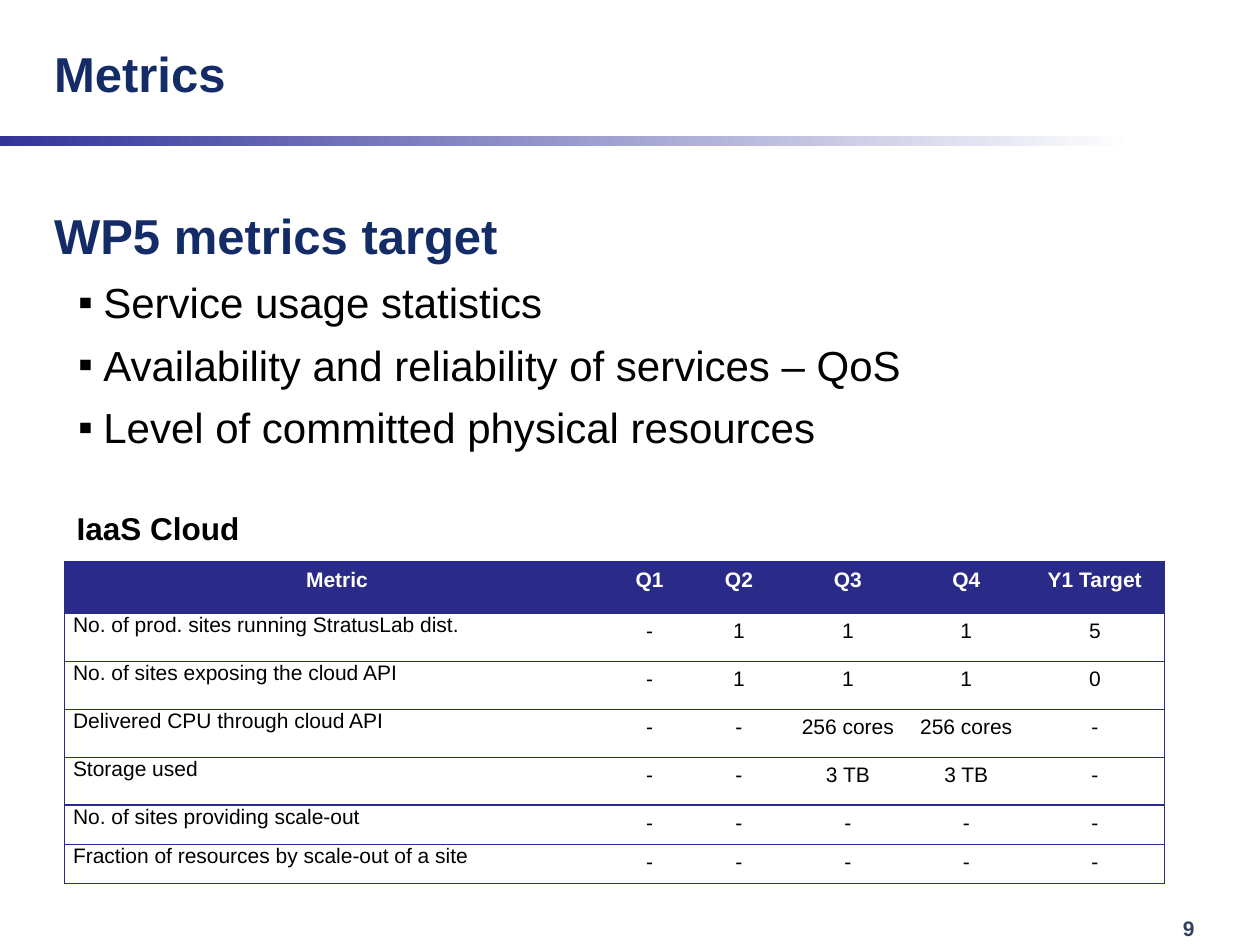
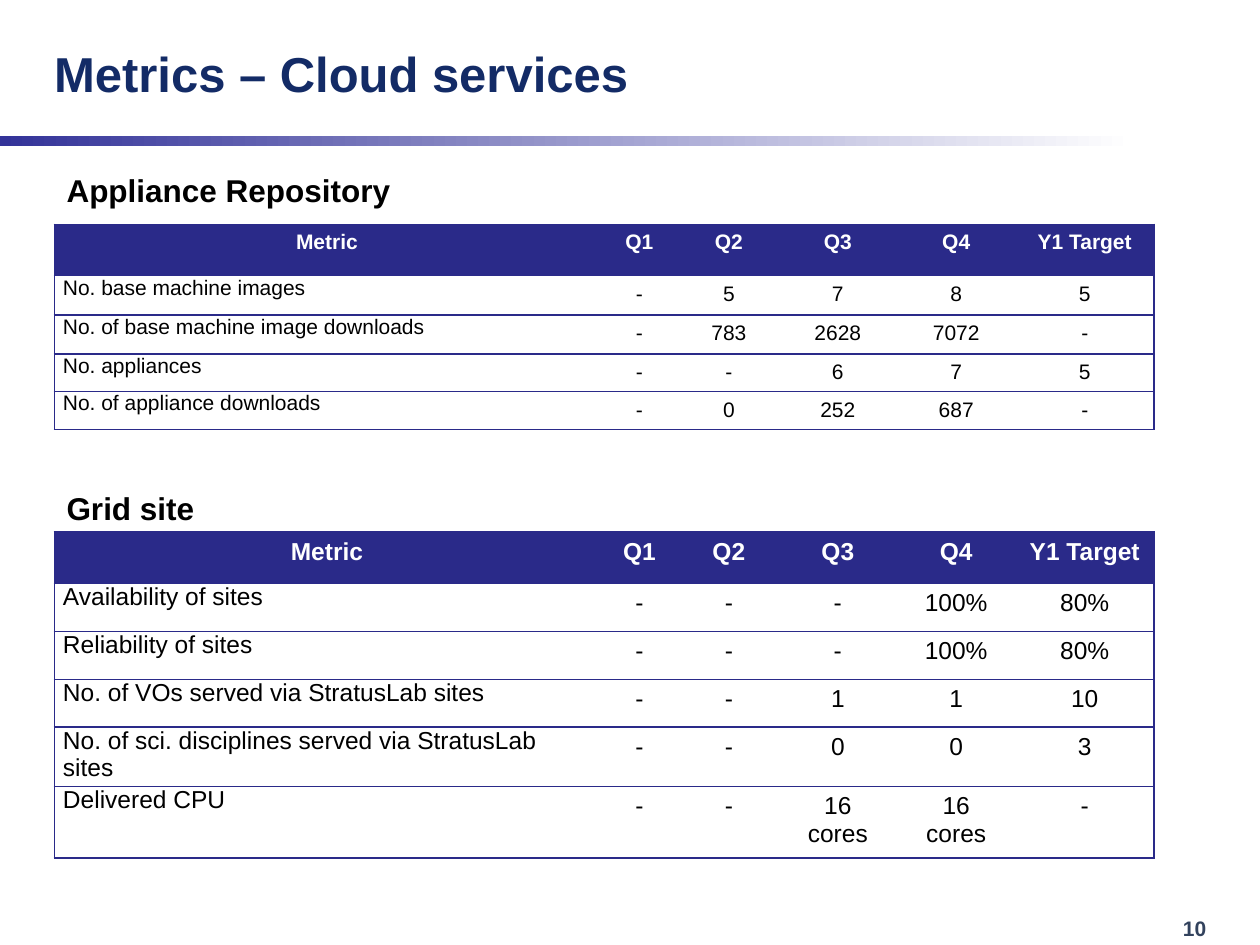
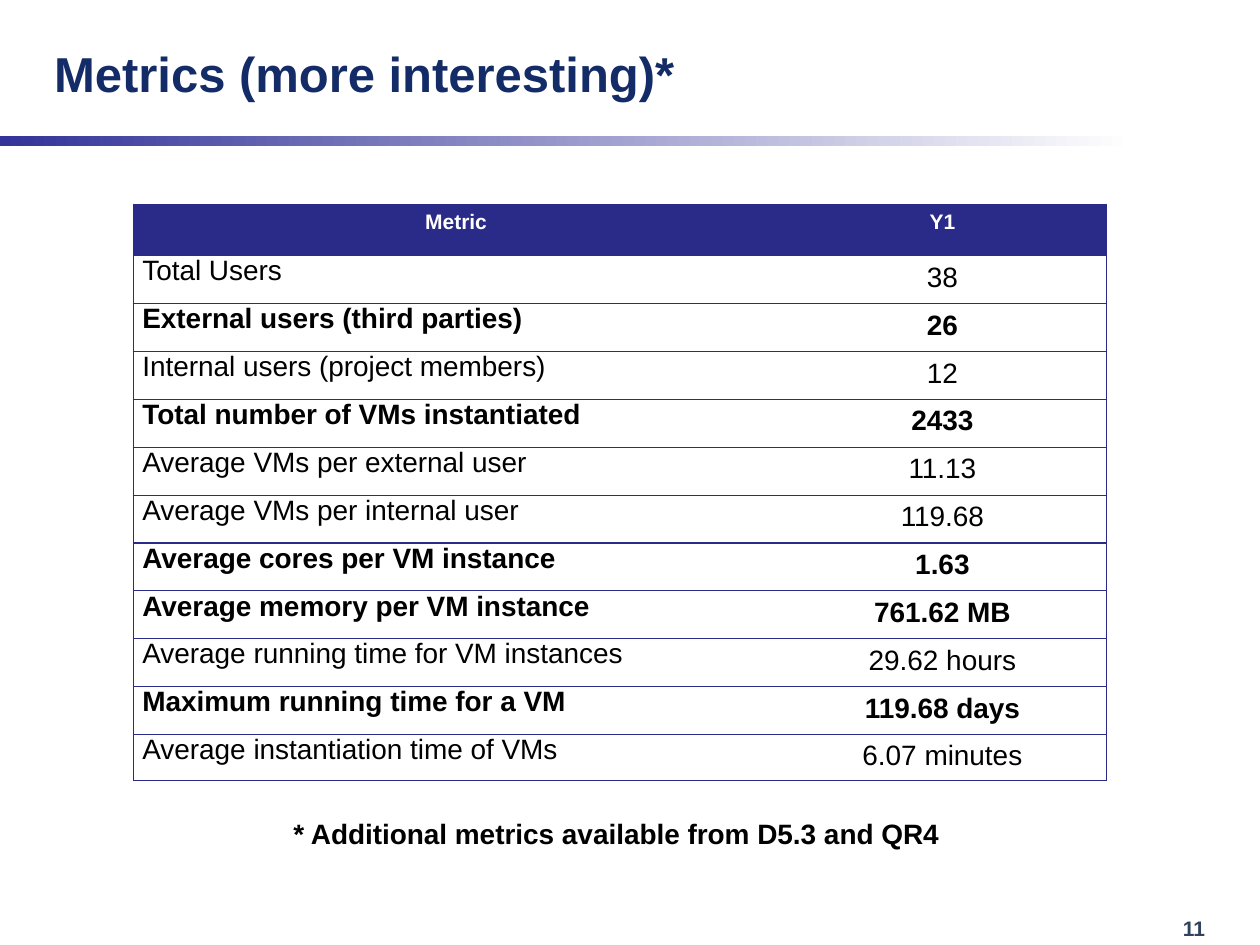
from lxml import etree
from pptx import Presentation
from pptx.dml.color import RGBColor
from pptx.enum.shapes import MSO_SHAPE
from pptx.enum.text import MSO_ANCHOR, MSO_AUTO_SIZE, PP_ALIGN
from pptx.oxml.ns import qn
from pptx.util import Inches, Pt

# A grid of 100 columns by 75 rows covers the slide.
UNIT = Inches(0.1)
COLS, ROWS = 100, 75
FONT = "Arial"
NAVY, BLUE, BAND, SLATE = "132B66", "2A2A89", "333399", "32425D"
WHITE, BLACK = "FFFFFF", "000000"

TITLE = {"size": Pt(28), "bold": True, "color": NAVY}
BULLET = {"size": Pt(24), "bold": False, "color": BLACK}
HEADING = {"size": Pt(18), "bold": True, "color": BLACK}
NOTE = {"size": Pt(16), "bold": True, "color": BLACK}
NUMBER = {"size": Pt(12), "bold": True, "color": SLATE}

QUARTER_HEAD = ["Metric", "Q1", "Q2", "Q3", "Q4", "Y1 Target"]
QUARTER_COLS = [43.3, 6.3, 7.9, 9.4, 9.4, 11]
HEAD_ROW, ROW, LOW_ROW = 4.1, 3.8, 3.1

CLOUD = [
    ["No. of prod. sites running StratusLab dist.", "-", "1", "1", "1", "5"],
    ["No. of sites exposing the cloud API", "-", "1", "1", "1", "0"],
    ["Delivered CPU through cloud API", "-", "-", "256 cores", "256 cores", "-"],
    ["Storage used", "-", "-", "3 TB", "3 TB", "-"],
    ["No. of sites providing scale-out", "-", "-", "-", "-", "-"],
    ["Fraction of resources by scale-out of a site", "-", "-", "-", "-", "-"],
]
REPOSITORY = [
    ["No. base machine images", "-", "5", "7", "8", "5"],
    ["No. of base machine image downloads", "-", "783", "2628", "7072", "-"],
    ["No. appliances", "-", "-", "6", "7", "5"],
    ["No. of appliance downloads", "-", "0", "252", "687", "-"],
]
GRID_SITE = [
    ["Availability of sites", "-", "-", "-", "100%", "80%"],
    ["Reliability of sites", "-", "-", "-", "100%", "80%"],
    ["No. of VOs served via StratusLab sites", "-", "-", "1", "1", "10"],
    ["No. of sci. disciplines served via StratusLab sites", "-", "-", "0", "0", "3"],
    ["Delivered CPU", "-", "-", "16 cores", "16 cores", "-"],
]
YEAR = [
    ["Total Users", "38"],
    ["External users (third parties)", "26"],
    ["Internal users (project members)", "12"],
    ["Total number of VMs instantiated", "2433"],
    ["Average VMs per external user", "11.13"],
    ["Average VMs per internal user", "119.68"],
    ["Average cores per VM instance", "1.63"],
    ["Average memory per VM instance", "761.62 MB"],
    ["Average running time for VM instances", "29.62 hours"],
    ["Maximum running time for a VM", "119.68 days"],
    ["Average instantiation time of VMs", "6.07 minutes"],
]
KEY_ROWS = {2, 4, 7, 8, 10}


def rgb(value):
    return RGBColor.from_string(value)


def grid(*cells):
    return [round(c * UNIT) for c in cells]


def write(p, text, style):
    r = p.add_run()
    r.text = text
    r.font.name = FONT
    for name, value in style.items():
        if name == "color":
            r.font.color.rgb = rgb(value)
        else:
            setattr(r.font, name, value)


def place(sp, *cells):
    sp.left, sp.top, sp.width, sp.height = grid(*cells)


def add_label(s, text, style, *cells):
    tf = s.shapes.add_textbox(*grid(*cells)).text_frame
    tf.word_wrap = False
    write(tf.paragraphs[0], text, style)


def add_slide(prs, layout, title, number):
    """Add a slide with the shared band, title style and page number."""
    s = prs.slides.add_slide(prs.slide_layouts.get_by_name(layout))
    band = s.shapes.add_shape(MSO_SHAPE.RECTANGLE, *grid(0, 10.8, COLS, 0.8))
    band.shadow.inherit = False
    band.line.fill.background()
    band.fill.gradient()
    band.fill.gradient_angle = 0
    for stop, position, color in zip(band.fill.gradient_stops, (0, 0.9), (BAND, WHITE)):
        stop.position = position
        stop.color.rgb = rgb(color)

    place(s.shapes.title, 3.3, 0.8, 70.8, 10)
    tf = s.shapes.title.text_frame
    tf.vertical_anchor = MSO_ANCHOR.MIDDLE
    tf.paragraphs[0].alignment = PP_ALIGN.LEFT
    write(tf.paragraphs[0], title, TITLE)
    add_label(s, str(number), NUMBER, 92.9, 72.2, 6.4, 3)
    return s


def set_bullet(p, char, left, hanging):
    pPr = p._p.get_or_add_pPr()
    pPr.set("marL", str(Inches(left)))
    pPr.set("indent", str(-Inches(hanging)))
    if char:
        etree.SubElement(pPr, qn("a:buFont"), typeface=FONT)
        etree.SubElement(pPr, qn("a:buChar"), char=char)
    else:
        etree.SubElement(pPr, qn("a:buNone"))


def fill_body(sp, heading, bullets):
    place(sp, 3.3, 15.8, 93.3, 55.8)
    tf = sp.text_frame
    tf.auto_size = MSO_AUTO_SIZE.NONE
    p = tf.paragraphs[0]
    set_bullet(p, None, 0.38, 0.38)
    p.space_before = Pt(0)
    write(p, heading, TITLE)
    for text in bullets:
        p = tf.add_paragraph()
        p.level = 1
        set_bullet(p, "▪", 0.39, 0.2)
        p.space_before = Pt(7)
        write(p, text, BULLET)


def set_borders(cell, sides):
    """Rule the named sides of a cell and clear the others."""
    tcPr = cell._tc.get_or_add_tcPr()
    for side in "LRTB":
        ln = etree.SubElement(tcPr, qn(f"a:ln{side}"), w=str(Pt(0.75)))
        if side in sides:
            fill = etree.SubElement(ln, qn("a:solidFill"))
            etree.SubElement(fill, qn("a:srgbClr"), val=BLUE)
        else:
            etree.SubElement(ln, qn("a:noFill"))


def add_metrics(s, left, top, head, rows, widths, heights, size, head_size=12, bold_rows=()):
    data = [head] + rows
    table = s.shapes.add_table(
        len(data), len(head), *grid(left, top, sum(widths), sum(heights))).table
    table.horz_banding = False
    for col, width in zip(table.columns, grid(*widths)):
        col.width = width
    for row, height in zip(table.rows, grid(*heights)):
        row.height = height

    last = len(head) - 1
    for i, texts in enumerate(data):
        is_head = i == 0
        style = {"size": Pt(head_size if is_head else size),
                 "bold": is_head or i in bold_rows,
                 "color": WHITE if is_head else BLACK}
        for j, text in enumerate(texts):
            cell = table.cell(i, j)
            set_borders(cell, "TB" + "L" * (j == 0) + "R" * (j == last))
            cell.fill.solid()
            cell.fill.fore_color.rgb = rgb(BLUE if is_head else WHITE)
            p = cell.text_frame.paragraphs[0]
            if is_head or j:
                p.alignment = PP_ALIGN.CENTER
            else:
                cell.margin_left = cell.margin_right = Inches(0.07)
                cell.margin_top = cell.margin_bottom = 0
            write(p, text, style)


def main():
    prs = Presentation()
    prs.slide_width, prs.slide_height = grid(COLS, ROWS)

    s = add_slide(prs, "Title and Content", "Metrics", 9)
    fill_body(s.placeholders[1], "WP5 metrics target", [
        "Service usage statistics",
        "Availability and reliability of services – QoS",
        "Level of committed physical resources",
    ])
    add_metrics(s, 5.1, 44.6, QUARTER_HEAD, CLOUD, QUARTER_COLS,
                [HEAD_ROW] + [ROW] * 4 + [LOW_ROW] * 2, 12)
    add_label(s, "IaaS Cloud", HEADING, 5.1, 39.9, 15.1, 4)

    s = add_slide(prs, "Title Only", "Metrics – Cloud services", 10)
    add_metrics(s, 4.3, 17.8, QUARTER_HEAD, REPOSITORY, QUARTER_COLS,
                [HEAD_ROW] + [LOW_ROW] * 2 + [3, 2.9], 12)
    add_label(s, "Appliance Repository", HEADING, 4.3, 13.1, 28.2, 4)
    add_metrics(s, 4.3, 42.2, QUARTER_HEAD, GRID_SITE, QUARTER_COLS,
                [HEAD_ROW] + [ROW] * 3 + [4.7, 5.7], 14, head_size=14)
    add_label(s, "Grid site", HEADING, 4.3, 38.3, 12.3, 4)

    s = add_slide(prs, "Title Only", "Metrics (more interesting)*", 11)
    add_metrics(s, 10.6, 16.2, ["Metric", "Y1"], YEAR, [51.2, 26],
                [HEAD_ROW] + [ROW] * 10 + [3.5], 16, bold_rows=KEY_ROWS)
    add_label(s, "* Additional metrics available from D5.3 and QR4", NOTE, 22.3, 64.3, 53.6, 3.7)

    prs.save("out.pptx")


if __name__ == "__main__":
    main()
